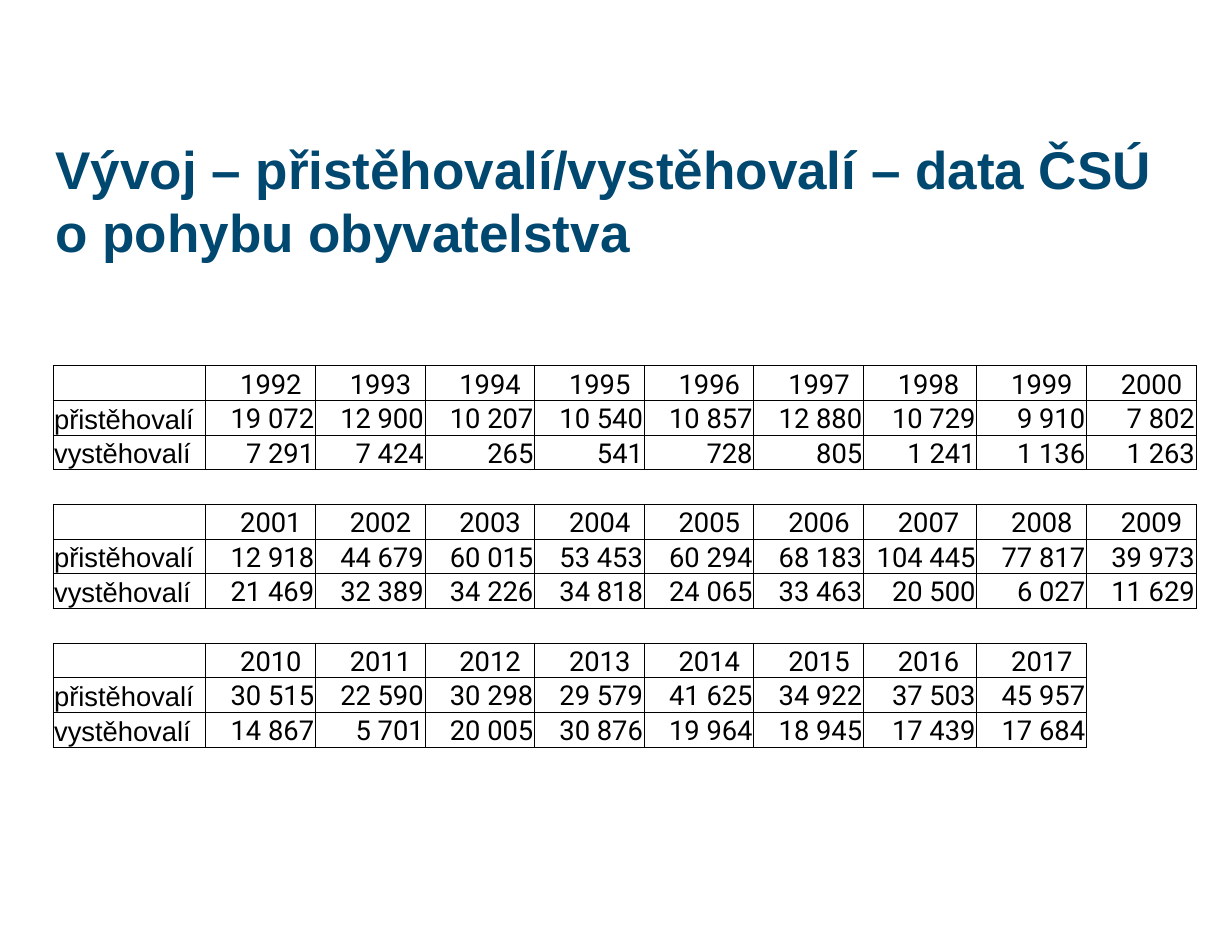
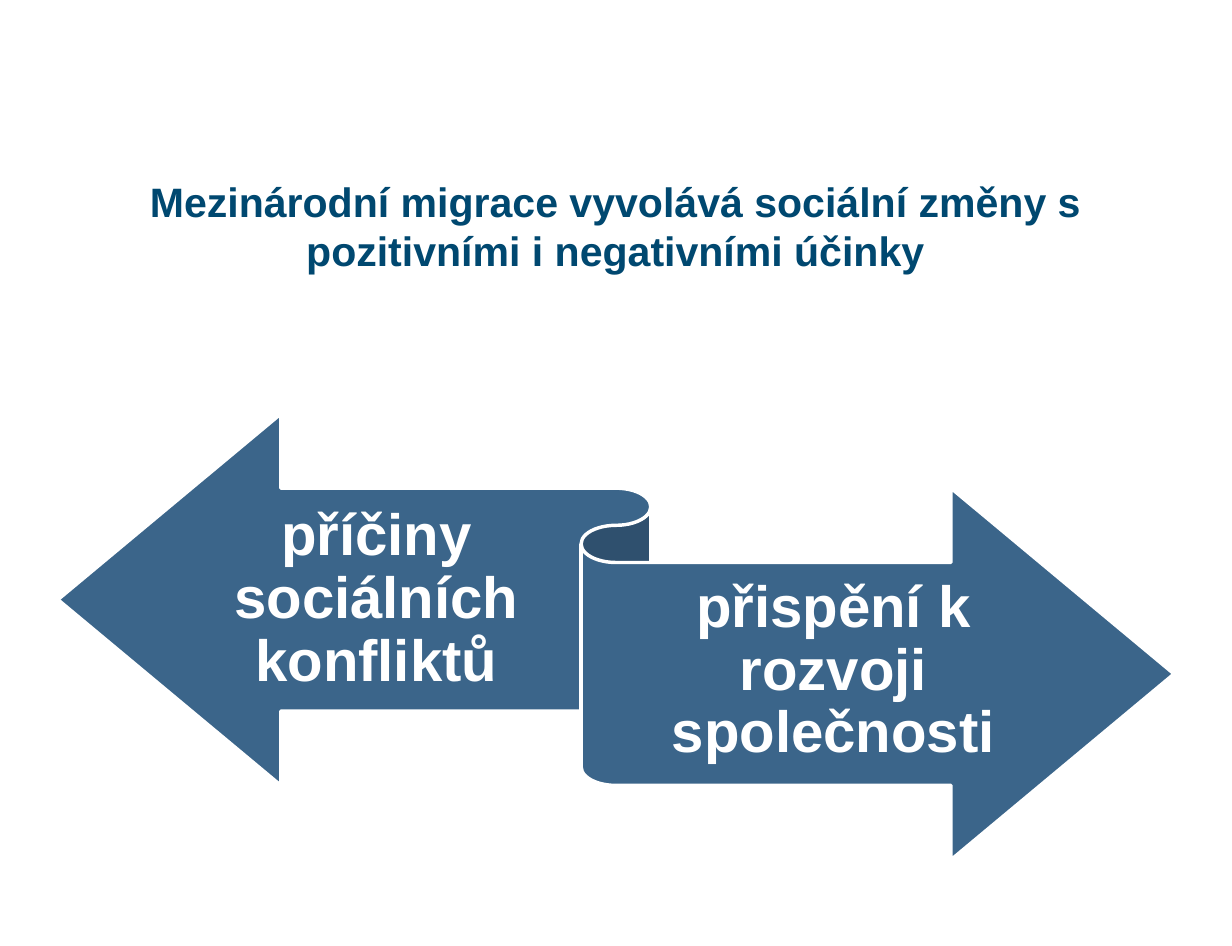
from pptx import Presentation
from pptx.dml.color import RGBColor
from pptx.enum.shapes import MSO_SHAPE
from pptx.enum.text import MSO_ANCHOR as ANCHOR, MSO_AUTO_SIZE as AUTO, PP_ALIGN as ALIGN
from pptx.oxml.ns import qn
from pptx.util import Inches, Pt
from lxml.etree import SubElement

NAVY = RGBColor(0x00, 0x48, 0x70)
STEEL = RGBColor(0x3B, 0x65, 0x8A)
WHITE = RGBColor(0xFF, 0xFF, 0xFF)
BLACK = RGBColor(0, 0, 0)

FONT, NUMBER_FONT = "Arial", "Roboto"
TITLE_ONLY = 5

# first year, arrivals, departures
PERIODS = [
    (1992,
     [19072, 12900, 10207, 10540, 10857, 12880, 10729, 9910, 7802],
     [7291, 7424, 265, 541, 728, 805, 1241, 1136, 1263]),
    (2001,
     [12918, 44679, 60015, 53453, 60294, 68183, 104445, 77817, 39973],
     [21469, 32389, 34226, 34818, 24065, 33463, 20500, 6027, 11629]),
    (2010,
     [30515, 22590, 30298, 29579, 41625, 34922, 37503, 45957],
     [14867, 5701, 20005, 30876, 19964, 18945, 17439, 17684]),
]
COL_WIDTHS = [1.24] + [0.89] * 6 + [0.92] + [0.89] * 2


def write(tf, text, size, color, font=FONT, bold=False, align=ALIGN.LEFT,
          anchor=None, insets=None, spacing=None):
    """Fill a text frame with one formatted paragraph."""
    tf.word_wrap = True
    if anchor is not None:
        tf.vertical_anchor = anchor
    if insets:
        (tf.margin_left, tf.margin_top,
         tf.margin_right, tf.margin_bottom) = map(Inches, insets)
    p = tf.paragraphs[0]
    p.alignment = align
    if spacing:
        p.line_spacing = spacing
    r = p.add_run()
    r.text = text
    r.font.name, r.font.size, r.font.bold = font, Pt(size), bold
    r.font.color.rgb = color


def add_titled_slide(prs, title, height, size, align=ALIGN.LEFT, bottom=0.05):
    s = prs.slides.add_slide(prs.slide_layouts[TITLE_ONLY])
    sp = s.shapes.title
    sp.left, sp.top, sp.width, sp.height = map(Inches, (0.35, 1.07, 9.29, height))
    sp.text_frame.auto_size = AUTO.NONE
    write(sp.text_frame, title, size, NAVY, bold=True, align=align,
          anchor=ANCHOR.BOTTOM, insets=(0.1, 0.05, 0.1, bottom))
    return s


def migration_rows():
    """Three rows for each period, with an empty row between periods."""
    rows = []
    for first_year, arrived, left in PERIODS:
        if rows:
            rows.append([])
        rows.append([""] + [str(first_year + i) for i in range(len(arrived))])
        for label, values in (("přistěhovalí", arrived), ("vystěhovalí", left)):
            rows.append([label] + [f"{v:,}".replace(",", " ") for v in values])
    return rows


def set_border(cell, side, visible):
    ln = SubElement(cell._tc.get_or_add_tcPr(), qn(f"a:ln{side}"), w=str(Pt(0.5)))
    if visible:
        fill = SubElement(ln, qn("a:solidFill"))
        SubElement(fill, qn("a:srgbClr"), val=str(BLACK))
    else:
        SubElement(ln, qn("a:noFill"))


def format_cell(cell, text, is_year, is_label):
    cell.vertical_anchor = ANCHOR.BOTTOM
    cell.margin_left = Inches(0.28 if is_year else 0.01)
    cell.margin_top = cell.margin_right = Inches(0.01)
    cell.margin_bottom = 0
    if text:
        write(cell.text_frame, text, 16, BLACK,
              font=FONT if is_label else NUMBER_FONT,
              align=ALIGN.LEFT if is_year or is_label else ALIGN.RIGHT)
    else:
        # keeps an empty cell from stretching its row
        SubElement(cell.text_frame.paragraphs[0]._p, qn("a:endParaRPr"), sz="1600")


def add_migration_table(s, left, top, height):
    rows = migration_rows()
    table = s.shapes.add_table(len(rows), len(COL_WIDTHS), Inches(left), Inches(top),
                               Inches(sum(COL_WIDTHS)), Inches(height)).table
    table.first_row = table.horz_banding = False
    for col, width in zip(table.columns, COL_WIDTHS):
        col.width = Inches(width)

    def used(i, j):
        return 0 <= i < len(rows) and 0 <= j < len(rows[i])

    for i, row in enumerate(rows):
        table.rows[i].height = Inches(height / len(rows))
        for j in range(len(COL_WIDTHS)):
            cell = table.cell(i, j)
            for side, di, dj in (("L", 0, -1), ("R", 0, 1), ("T", -1, 0), ("B", 1, 0)):
                set_border(cell, side, used(i, j) or used(i + di, j + dj))
            cell.fill.solid()
            cell.fill.fore_color.rgb = WHITE
            format_cell(cell, row[j] if used(i, j) else "",
                        is_year=i % 4 == 0 and j > 0, is_label=j == 0)


def add_effects_ribbon(s, left, top, width, height):
    """Two-way ribbon with one label on each arrow."""
    group = s.shapes.add_group_shape()
    sp = group.shapes.add_shape(MSO_SHAPE.LEFT_RIGHT_RIBBON,
                                *map(Inches, (left, top, width, height)))
    sp.shadow.inherit = False
    sp.fill.solid()
    sp.fill.fore_color.rgb = STEEL
    sp.line.color.rgb = WHITE
    sp.line.width = Pt(2)
    for text, dx, dy, label_width in (
            ("příčiny sociálních konfliktů", 1.09, 0.63, 2.99),
            ("přispění k rozvoji společnosti", 4.53, 1.21, 3.53)):
        box = group.shapes.add_textbox(
            *map(Inches, (left + dx, top + dy, label_width, 1.77)))
        write(box.text_frame, text, 34, WHITE, bold=True, align=ALIGN.CENTER,
              anchor=ANCHOR.MIDDLE, insets=(0, 0.13, 0, 0.14), spacing=0.9)


def main():
    prs = Presentation()
    prs.slide_width, prs.slide_height = Inches(10), Inches(7.68)

    s = add_titled_slide(
        prs, "Vývoj – přistěhovalí/vystěhovalí – data ČSÚ o pohybu obyvatelstva",
        height=1.12, size=31)
    add_migration_table(s, 0.43, 2.97, 3.09)

    s = add_titled_slide(
        prs, "Mezinárodní migrace vyvolává sociální změny s pozitivními i negativními účinky",
        height=1.59, size=24, align=ALIGN.CENTER, bottom=0.43)
    add_effects_ribbon(s, 0.47, 3.36, 9.06, 3.62)

    prs.save("out.pptx")


if __name__ == "__main__":
    main()
